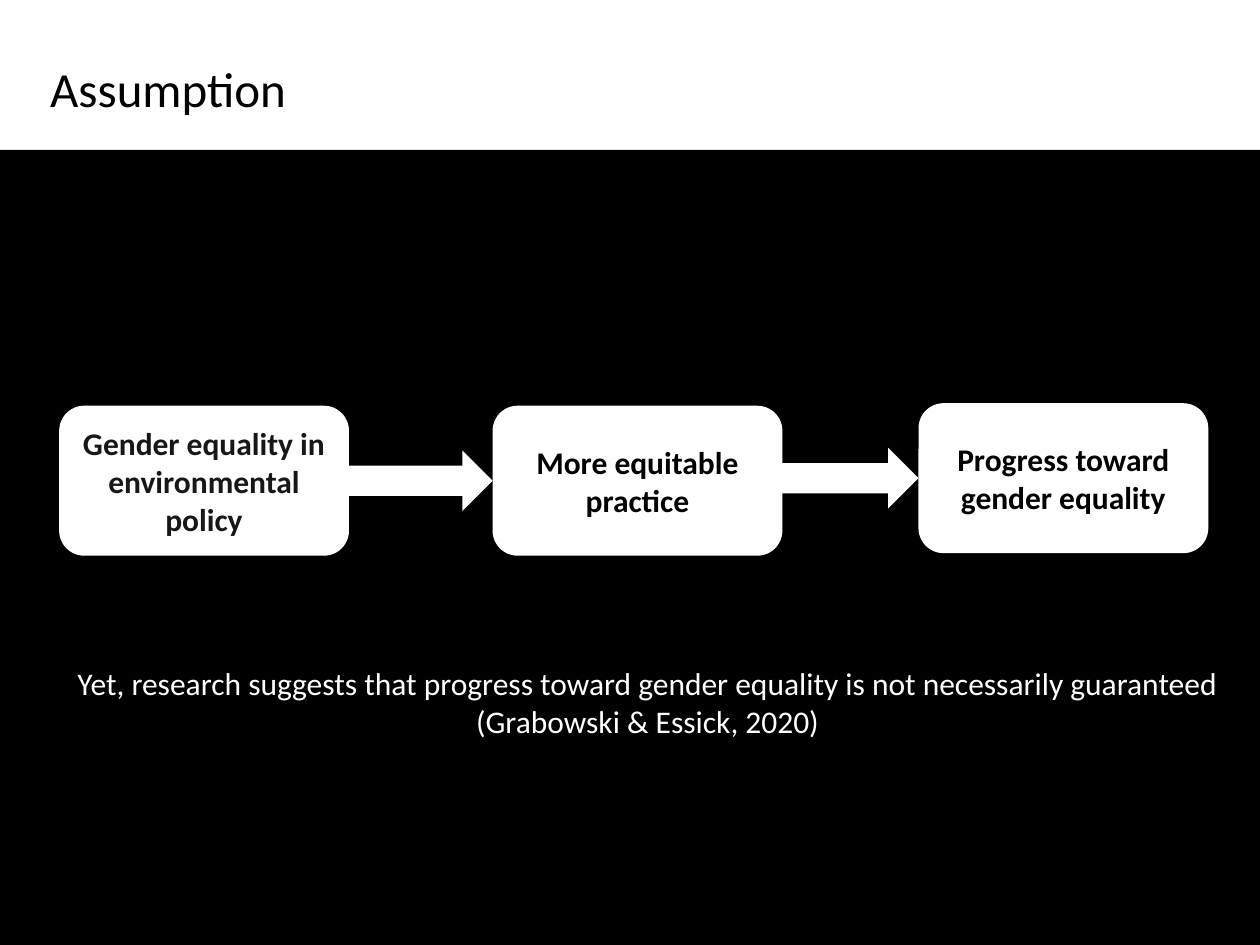
from pptx import Presentation
from pptx.dml.color import RGBColor
from pptx.enum.shapes import MSO_SHAPE
from pptx.enum.text import MSO_ANCHOR, PP_ALIGN
from pptx.util import Inches, Pt

BLACK = RGBColor(0x00, 0x00, 0x00)
CHARCOAL = RGBColor(0x18, 0x17, 0x17)
WHITE = RGBColor(0xFF, 0xFF, 0xFF)

STAGE_WIDTH, STAGE_HEIGHT, ARROW_HEIGHT = 2.3, 1.19, 0.48
STAGES = [
    ("Gender equality in environmental policy", 0.47, 3.22, CHARCOAL),
    ("More equitable practice", 3.91, 3.22, BLACK),
    ("Progress toward gender equality", 7.29, 3.2, BLACK),
]
ARROW_OVERLAPS = [0, 0.18]


def add_filled_shape(page, kind, left, top, width, height, fill):
    """Add a flat preset shape without an outline."""
    shape = page.shapes.add_shape(
        kind, Inches(left), Inches(top), Inches(width), Inches(height))
    shape.shadow.inherit = False
    shape.fill.solid()
    shape.fill.fore_color.rgb = fill
    shape.line.fill.background()
    return shape


def write_text(frame, text, size=18, color=BLACK, bold=False,
               align=PP_ALIGN.CENTER, anchor=MSO_ANCHOR.MIDDLE, spacing=1.0):
    """Fill a text frame with one paragraph for each line of text."""
    frame.word_wrap = True
    frame.vertical_anchor = anchor
    for index, line in enumerate(text.split("\n")):
        para = frame.add_paragraph() if index else frame.paragraphs[0]
        para.alignment = align
        para.line_spacing = spacing
        span = para.add_run()
        span.text = line
        span.font.name = "Calibri"
        span.font.size = Pt(size)
        span.font.bold = bold
        span.font.color.rgb = color


def add_text(page, text, left, top, width, height, **style):
    """Add a text box with formatted text."""
    box = page.shapes.add_textbox(
        Inches(left), Inches(top), Inches(width), Inches(height))
    write_text(box.text_frame, text, **style)


def add_stage(page, text, left, top, color):
    """Add one rounded stage of the flow."""
    box = add_filled_shape(page, MSO_SHAPE.ROUNDED_RECTANGLE, left, top,
                           STAGE_WIDTH, STAGE_HEIGHT, WHITE)
    write_text(box.text_frame, text, color=color, bold=True)


def add_flow(page):
    """Add the stages and the arrows that join neighbouring stages."""
    for stage in STAGES:
        add_stage(page, *stage)
    for source, target, overlap in zip(STAGES, STAGES[1:], ARROW_OVERLAPS):
        start = source[1] + STAGE_WIDTH - overlap
        top = target[2] + (STAGE_HEIGHT - ARROW_HEIGHT) / 2
        add_filled_shape(page, MSO_SHAPE.RIGHT_ARROW, start, top,
                         target[1] - start, ARROW_HEIGHT, WHITE)


def main():
    """Build and save the deck."""
    deck = Presentation()
    deck.slide_width, deck.slide_height = Inches(10), Inches(7.5)
    page = deck.slides.add_slide(deck.slide_layouts[6])
    add_filled_shape(page, MSO_SHAPE.RECTANGLE, -0.02, 1.19, 10.12, 6.31, BLACK)
    add_text(page, "Assumption", 0.3, 0.18, 6.1, 1.09,
             size=28, align=PP_ALIGN.LEFT, spacing=0.9)
    add_flow(page)
    add_text(page, "Yet, research suggests that progress toward gender equality "
             "is not necessarily guaranteed\n(Grabowski & Essick, 2020)",
             0.17, 5.22, 9.94, 0.71, color=WHITE, anchor=MSO_ANCHOR.TOP)
    deck.save("out.pptx")


if __name__ == "__main__":
    main()
